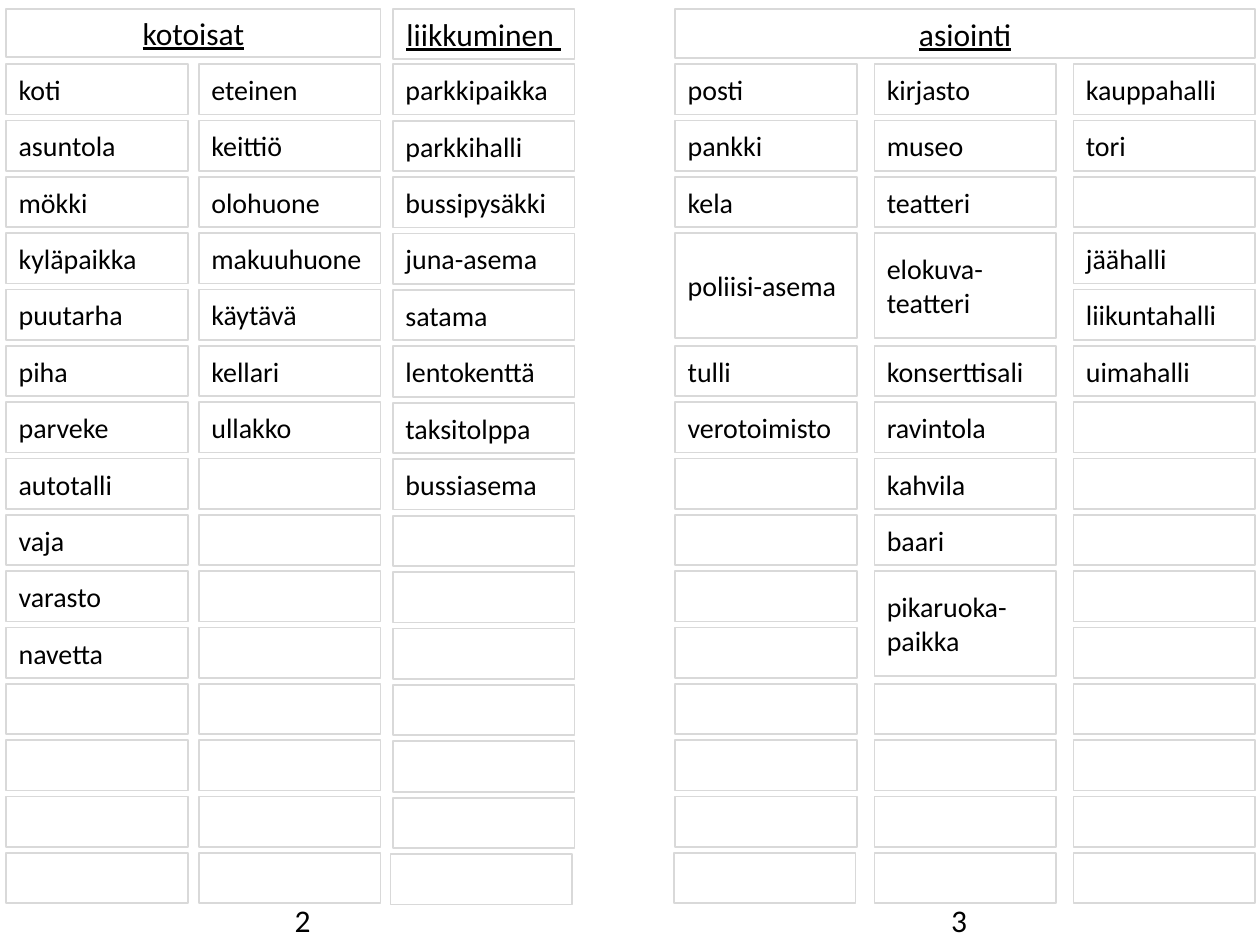
import pptx
import pptx.util
import pptx.dml.color
import pptx.enum.shapes
import pptx.enum.text

Inches = pptx.util.Inches
ALIGN = pptx.enum.text.PP_ALIGN
ROWS = 15
CELL_WIDTH, CELL_HEIGHT = 1.44, 0.4
HEADING_TOP, FIRST_ROW_TOP = 0.07, 0.51
DOUBLE_HEIGHT = {"poliisi-asema", "elokuva-teatteri", "pikaruoka-paikka"}

HOME = [
    ["koti", "asuntola", "mökki", "kyläpaikka", "puutarha", "piha", "parveke",
     "autotalli", "vaja", "varasto", "navetta"],
    ["eteinen", "keittiö", "olohuone", "makuuhuone", "käytävä", "kellari", "ullakko"],
]
TRAVEL = [
    ["parkkipaikka", "parkkihalli", "bussipysäkki", "juna-asema", "satama",
     "lentokenttä", "taksitolppa", "bussiasema"],
]
ERRANDS = [
    ["posti", "pankki", "kela", "poliisi-asema", "tulli", "verotoimisto"],
    ["kirjasto", "museo", "teatteri", "elokuva-teatteri", "konserttisali",
     "ravintola", "kahvila", "baari", "pikaruoka-paikka"],
    ["kauppahalli", "tori", "", "jäähalli", "liikuntahalli", "uimahalli"],
]


def color(value):
    """Return the colour for a hex string."""
    return pptx.dml.color.RGBColor.from_string(value)


def write(frame, text, size=16, align=ALIGN.LEFT, underline=False, wrap=True,
          anchor=pptx.enum.text.MSO_ANCHOR.MIDDLE):
    """Put formatted text into a text frame."""
    frame.word_wrap = wrap
    frame.vertical_anchor = anchor
    paragraph = frame.paragraphs[0]
    paragraph.alignment = align
    run = paragraph.add_run()
    run.text = text
    run.font.name = "Calibri"
    run.font.size = pptx.util.Pt(size)
    run.font.underline = underline
    run.font.color.rgb = color("000000")


def add_cell(slide, left, top, width, height, text="", **text_format):
    """Draw one outlined cell, with its word if it has one."""
    cell = slide.shapes.add_shape(
        pptx.enum.shapes.MSO_SHAPE.RECTANGLE,
        Inches(left), Inches(top), Inches(width), Inches(height))
    cell.shadow.inherit = False
    cell.fill.background()
    cell.line.color.rgb = color("D9D9D9")
    cell.line.width = pptx.util.Pt(1)
    if text:
        write(cell.text_frame, text, **text_format)


def add_column(slide, left, top, words, last_top, last_shift):
    """Stack the words from the top and fill the remaining rows with empty cells."""
    pitch = (last_top - top) / (ROWS - 1)
    spans = [2 if word in DOUBLE_HEIGHT else 1 for word in words]
    empty = ROWS - sum(spans)
    row = 0
    for word, span in zip(words + [""] * empty, spans + [1] * empty):
        shift = last_shift if row == ROWS - 1 else 0
        height = CELL_HEIGHT if span == 1 else 0.83
        add_cell(slide, left + shift, top + row * pitch, CELL_WIDTH, height, word)
        row += span


def add_word_group(slide, left, width, heading, columns, heading_height=0.39,
                   last_top=6.77, last_shift=0):
    """Place a heading over columns spread evenly across the group's width."""
    add_cell(slide, left, HEADING_TOP, width, heading_height, heading,
             size=18, align=ALIGN.CENTER, underline=True)
    step = (width - CELL_WIDTH) / max(len(columns) - 1, 1)
    for index, words in enumerate(columns):
        add_column(slide, left + index * step, FIRST_ROW_TOP, words, last_top,
                   last_shift if index == 0 else 0)


def add_page_number(slide, left, width, number):
    """Write a page number below a group of words."""
    box = slide.shapes.add_textbox(Inches(left), Inches(7.1), Inches(width), Inches(0.4))
    write(box.text_frame, number, size=18, wrap=False,
          anchor=pptx.enum.text.MSO_ANCHOR.TOP)


def main():
    """Build the word list spread."""
    deck = pptx.Presentation()
    deck.slide_width, deck.slide_height = Inches(10), Inches(7.5)
    slide = deck.slides.add_slide(deck.slide_layouts[6])
    add_page_number(slide, 7.45, 0.43, "3")
    add_page_number(slide, 2.24, 0.34, "2")
    add_word_group(slide, 3.12, CELL_WIDTH, "liikkuminen ", TRAVEL,
                   heading_height=0.4, last_top=6.78, last_shift=-0.02)
    add_word_group(slide, 0.05, 2.97, "kotoisat", HOME, heading_height=0.38)
    add_word_group(slide, 5.36, 4.6, "asiointi", ERRANDS, last_shift=-0.01)
    deck.save("out.pptx")


if __name__ == "__main__":
    main()
